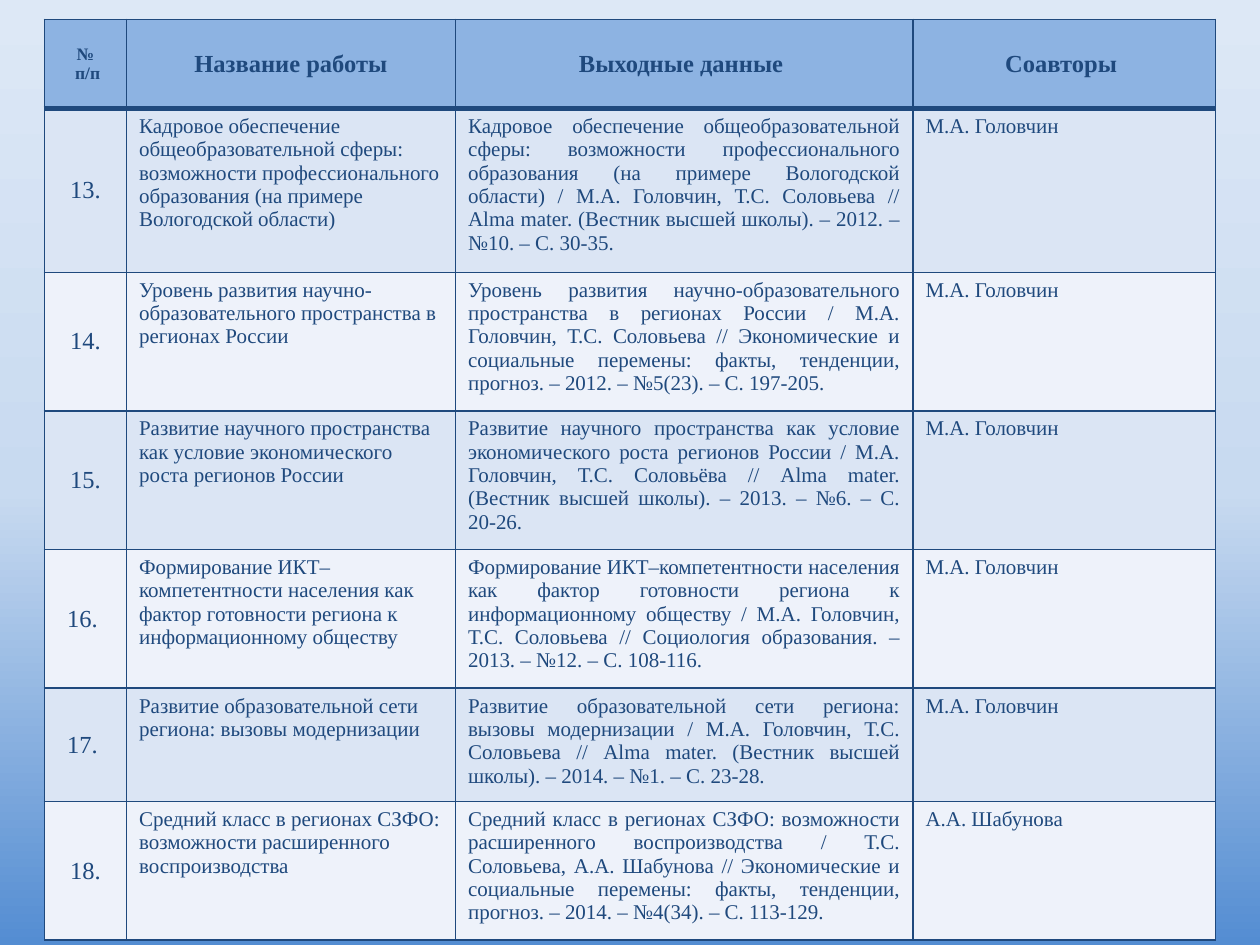
from dataclasses import dataclass

from lxml import etree
from pptx import Presentation
from pptx.dml.color import RGBColor
from pptx.enum import text
from pptx.oxml import ns
from pptx.util import Pt


@dataclass(frozen=True)
class Theme:
    font: str = "Times New Roman"
    ink: str = "1F497D"
    head: str = "8DB3E2"
    bands: tuple = ("DBE5F4", "EEF2FA")
    sky: tuple = ((0, "548DD2"), (48, "C8DAF0"), (100, "DDE8F6"))
    small: int = 10
    body: int = 12
    large: int = 14
    thin: int = 1
    thick: int = 3


THEME = Theme()
LEFT, TOP = 25.4, 11
WIDTHS = (46.9, 188, 261.4, 172.9)
HEAD_H = 51
HEADS = ("№\n п/п", "Название работы", "Выходные данные ", "Соавторы ")
PEER = "М.А. Головчин"

# number, title, rest of the citation, co-author, row height
WORKS = (
    ("13.", "Кадровое обеспечение общеобразовательной сферы: возможности "
     "профессионального образования (на примере Вологодской области)",
     "М.А. Головчин, Т.С. Соловьева // Alma mater. (Вестник высшей школы). "
     "– 2012. – №10. – С. 30-35.", PEER, 93.6),
    ("14.", "Уровень развития научно-образовательного пространства "
     "в регионах России",
     "М.А. Головчин, Т.С. Соловьева // Экономические и социальные перемены: "
     "факты, тенденции, прогноз. – 2012. – №5(23). – С. 197-205.", PEER, 79.2),
    ("15.", "Развитие научного пространства как условие экономического "
     "роста регионов России",
     "М.А. Головчин, Т.С. Соловьёва // Alma mater. (Вестник высшей школы). "
     "– 2013. – №6. – С. 20-26.", PEER, 79.2),
    ("16. ", "Формирование ИКТ–компетентности населения как фактор "
     "готовности региона к информационному обществу",
     "М.А. Головчин, Т.С. Соловьева // Социология образования. "
     "– 2013. – №12. – С. 108-116.", PEER, 79.2),
    ("17. ", "Развитие образовательной сети региона: вызовы модернизации",
     "М.А. Головчин, Т.С. Соловьева // Alma mater. (Вестник высшей школы). "
     "– 2014. – №1. – С. 23-28.", PEER, 64.8),
    ("18.", "Средний класс в регионах СЗФО: возможности расширенного "
     "воспроизводства",
     "Т.С. Соловьева, А.А. Шабунова // Экономические и социальные перемены: "
     "факты, тенденции, прогноз. – 2014. – №4(34). – С. 113-129.",
     "А.А. Шабунова", 79.2),
)


def add_node(parent, tag, **attrs):
    return etree.SubElement(parent, ns.qn(tag), attrs)


def paint_sky(slide):
    """Fill the background with a gradient that rises from the bottom edge."""
    fill = slide.background.fill
    fill.gradient()
    fill.gradient_angle = 90
    stops = slide.element.find(".//" + ns.qn("a:gsLst"))
    for stop in list(stops):
        stops.remove(stop)
    for pos, color in THEME.sky:
        stop = add_node(stops, "a:gs", pos=str(pos * 1000))
        add_node(stop, "a:srgbClr", val=color)


def draw_edges(cell, top, bottom):
    props = cell._tc.get_or_add_tcPr()
    widths = {"L": THEME.thin, "R": THEME.thin, "T": top, "B": bottom}
    for side, width in widths.items():
        line = add_node(props, "a:ln" + side, w=str(Pt(width)))
        solid = add_node(line, "a:solidFill")
        add_node(solid, "a:srgbClr", val=THEME.ink)


def fill_cell(cell, words, size, color, align, bold=False, middle=False,
              top=THEME.thin, bottom=THEME.thin):
    draw_edges(cell, top, bottom)
    cell.fill.solid()
    cell.fill.fore_color.rgb = RGBColor.from_string(color)
    if middle:
        cell.vertical_anchor = text.MSO_ANCHOR.MIDDLE
    cell.text_frame.text = words
    for para in cell.text_frame.paragraphs:
        para.alignment = align
        for run in para.runs:
            font = run.font
            font.name, font.size, font.bold = THEME.font, Pt(size), bold
            font.color.rgb = RGBColor.from_string(THEME.ink)


def add_grid(slide):
    heights = [HEAD_H] + [work[-1] for work in WORKS]
    grid = slide.shapes.add_table(
        len(heights), len(WIDTHS), Pt(LEFT), Pt(TOP),
        Pt(sum(WIDTHS)), Pt(sum(heights))).table
    for col, width in zip(grid.columns, WIDTHS):
        col.width = Pt(width)
    for row, height in zip(grid.rows, heights):
        row.height = Pt(height)
    return grid


def fill_head(grid):
    for col, words in enumerate(HEADS):
        size = THEME.large if col else THEME.small
        fill_cell(grid.cell(0, col), words, size, THEME.head,
                  text.PP_ALIGN.CENTER, bold=True, middle=True,
                  bottom=THEME.thick)


def fill_works(grid):
    align = text.PP_ALIGN
    aligns = (align.CENTER, align.LEFT, align.JUSTIFY, align.LEFT)
    for row, (number, title, rest, peer, _) in enumerate(WORKS, 1):
        color = THEME.bands[(row - 1) % 2]
        top = THEME.thick if row == 1 else THEME.thin
        cells = (number, title, f"{title} / {rest}", peer)
        for col, words in enumerate(cells):
            size = THEME.body if col else THEME.large
            fill_cell(grid.cell(row, col), words, size, color, aligns[col],
                      middle=col == 0, top=top)


def main():
    deck = Presentation()
    deck.slide_width, deck.slide_height = Pt(720), Pt(540)
    slide = deck.slides.add_slide(deck.slide_layouts[6])
    paint_sky(slide)
    grid = add_grid(slide)
    fill_head(grid)
    fill_works(grid)
    deck.save("out.pptx")


if __name__ == "__main__":
    main()
